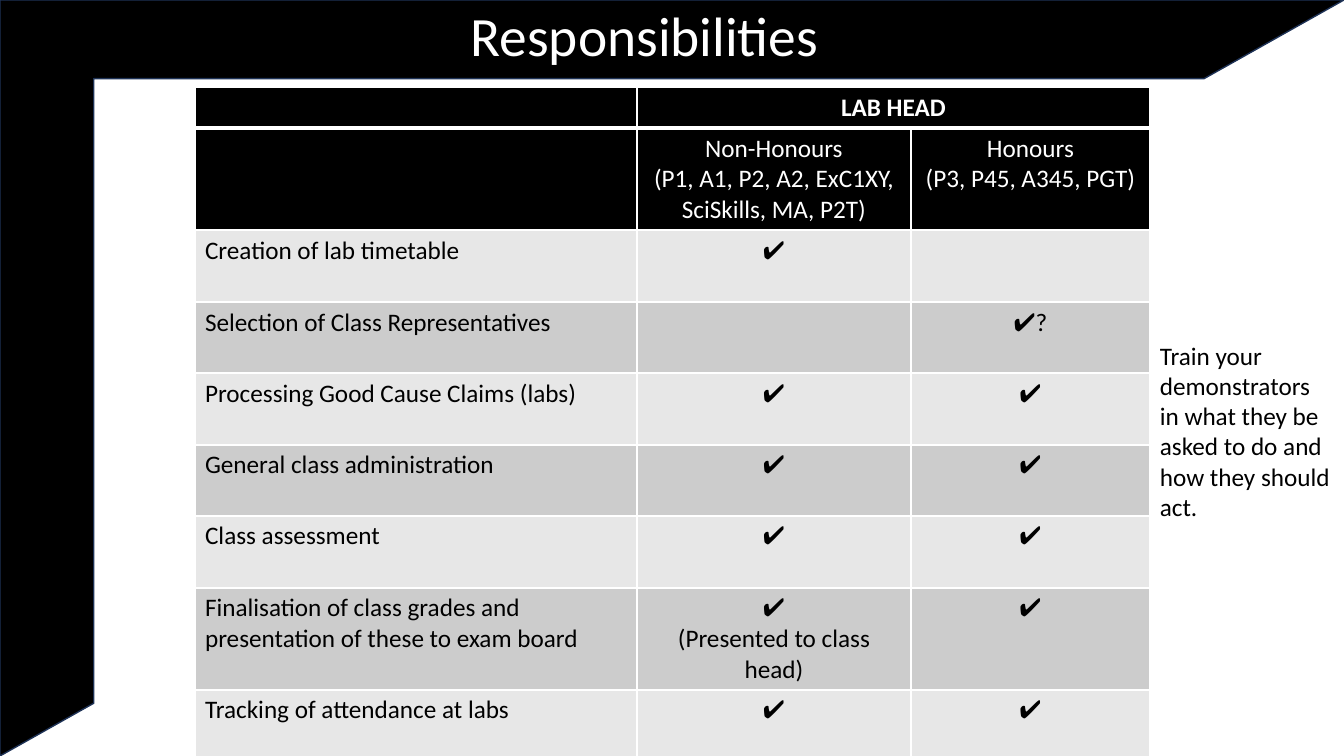
from lxml import etree
from pptx import Presentation
from pptx.dml.color import RGBColor
from pptx.enum.shapes import MSO_SHAPE
from pptx.enum.text import MSO_ANCHOR, PP_ALIGN
from pptx.oxml.ns import qn
from pptx.util import Emu, Pt

HALF_FRAME = MSO_SHAPE.HALF_FRAME
TOP, MIDDLE = MSO_ANCHOR.TOP, MSO_ANCHOR.MIDDLE
LEFT, CENTER = PP_ALIGN.LEFT, PP_ALIGN.CENTER

BLACK = RGBColor(0x00, 0x00, 0x00)
WHITE = RGBColor(0xFF, 0xFF, 0xFF)
NAVY = RGBColor(0x1E, 0x32, 0x56)
LIGHT_BAND = RGBColor(0xE7, 0xE7, 0xE7)
DARK_BAND = RGBColor(0xCC, 0xCC, 0xCC)

FONT = "Calibri"
PX_PER_INCH = 100.8
SLIDE_WIDTH, SLIDE_HEIGHT = 1344, 756

TICK = "✔️"
COLUMN_WIDTHS = [442, 274, 239]
HEADER_ROWS = [
    (41, ["", "LAB HEAD", ""]),
    (102, ["", "Non-Honours\n(P1, A1, P2, A2, ExC1XY, SciSkills, MA, P2T)",
           "Honours\n(P3, P45, A345, PGT)"]),
]
DUTY_ROWS = [
    (72, ["Creation of lab timetable", TICK, ""]),
    (71, ["Selection of Class Representatives", "", TICK + "?"]),
    (72, ["Processing Good Cause Claims (labs)", TICK, TICK]),
    (71, ["General class administration", TICK, TICK]),
    (72, ["Class assessment", TICK, TICK]),
    (102, ["Finalisation of class grades and presentation of these to exam board",
           TICK + "\n(Presented to class head)", TICK]),
    (72, ["Tracking of attendance at labs", TICK, TICK]),
]


def px(length):
    return Emu(round(length * 914400 / PX_PER_INCH))


def write_text(text_frame, text, size, color, align, bold=False, spacing=None):
    text_frame.text = text
    for paragraph in text_frame.paragraphs:
        paragraph.alignment = align
        paragraph.line_spacing = spacing
        paragraph.font.size = Pt(size)
        for run in paragraph.runs:
            run.font.name = FONT
            run.font.size = Pt(size)
            run.font.bold = bold
            run.font.color.rgb = color


def add_text(slide, box, text, size, color, align, anchor=TOP, spacing=None):
    text_frame = slide.shapes.add_textbox(*map(px, box)).text_frame
    text_frame.word_wrap = True
    text_frame.vertical_anchor = anchor
    write_text(text_frame, text, size, color, align, spacing=spacing)


def add_frame(slide):
    shape = slide.shapes.add_shape(HALF_FRAME, 0, 0, px(SLIDE_WIDTH), px(SLIDE_HEIGHT))
    shape.adjustments[0] = 0.104
    shape.adjustments[1] = 0.124
    shape.shadow.inherit = False
    shape.fill.solid()
    shape.fill.fore_color.rgb = BLACK
    shape.line.color.rgb = NAVY
    shape.line.width = Pt(1)


def set_borders(cell, top, bottom):
    """Draw white borders, 1 pt at the sides and the given points elsewhere."""
    properties = cell._tc.get_or_add_tcPr()
    widths = {"a:lnL": 1, "a:lnR": 1, "a:lnT": top, "a:lnB": bottom}
    for index, (tag, width) in enumerate(widths.items()):
        line = etree.Element(qn(tag), w=str(Pt(width)))
        fill = etree.SubElement(line, qn("a:solidFill"))
        etree.SubElement(fill, qn("a:srgbClr"), val=str(WHITE))
        properties.insert(index, line)


def add_duties_table(slide, left, top):
    rows = HEADER_ROWS + DUTY_ROWS
    width = sum(COLUMN_WIDTHS)
    height = sum(row_height for row_height, _ in rows)
    table = slide.shapes.add_table(len(rows), len(COLUMN_WIDTHS), px(left), px(top),
                                   px(width), px(height)).table
    for column, column_width in zip(table.columns, COLUMN_WIDTHS):
        column.width = px(column_width)
    for row_index, (row_height, texts) in enumerate(rows):
        table.rows[row_index].height = px(row_height)
        is_header = row_index < len(HEADER_ROWS)
        band = LIGHT_BAND if row_index % 2 == 0 else DARK_BAND
        for column_index, text in enumerate(texts):
            cell = table.cell(row_index, column_index)
            cell.fill.solid()
            cell.fill.fore_color.rgb = BLACK if is_header else band
            set_borders(cell, top=3 if row_index == 1 else 1,
                        bottom=3 if row_index == 0 else 1)
            write_text(cell.text_frame, text, 18, WHITE if is_header else BLACK,
                       CENTER if column_index else LEFT, bold=row_index == 0)
    table.cell(0, 1).merge(table.cell(0, 2))


def main():
    presentation = Presentation()
    presentation.slide_width = px(SLIDE_WIDTH)
    presentation.slide_height = px(SLIDE_HEIGHT)
    slide = presentation.slides.add_slide(presentation.slide_layouts[6])
    add_frame(slide)
    add_text(slide, (240, 11, 809, 56), "Responsibilities", 39.6, WHITE, CENTER,
             anchor=MIDDLE, spacing=0.9)
    add_duties_table(slide, 195, 87)
    add_text(slide, (1150, 335, 194, 194),
             "Train your demonstrators in what they be asked to do and how they should act.",
             18, BLACK, LEFT)
    presentation.save("out.pptx")


if __name__ == "__main__":
    main()
